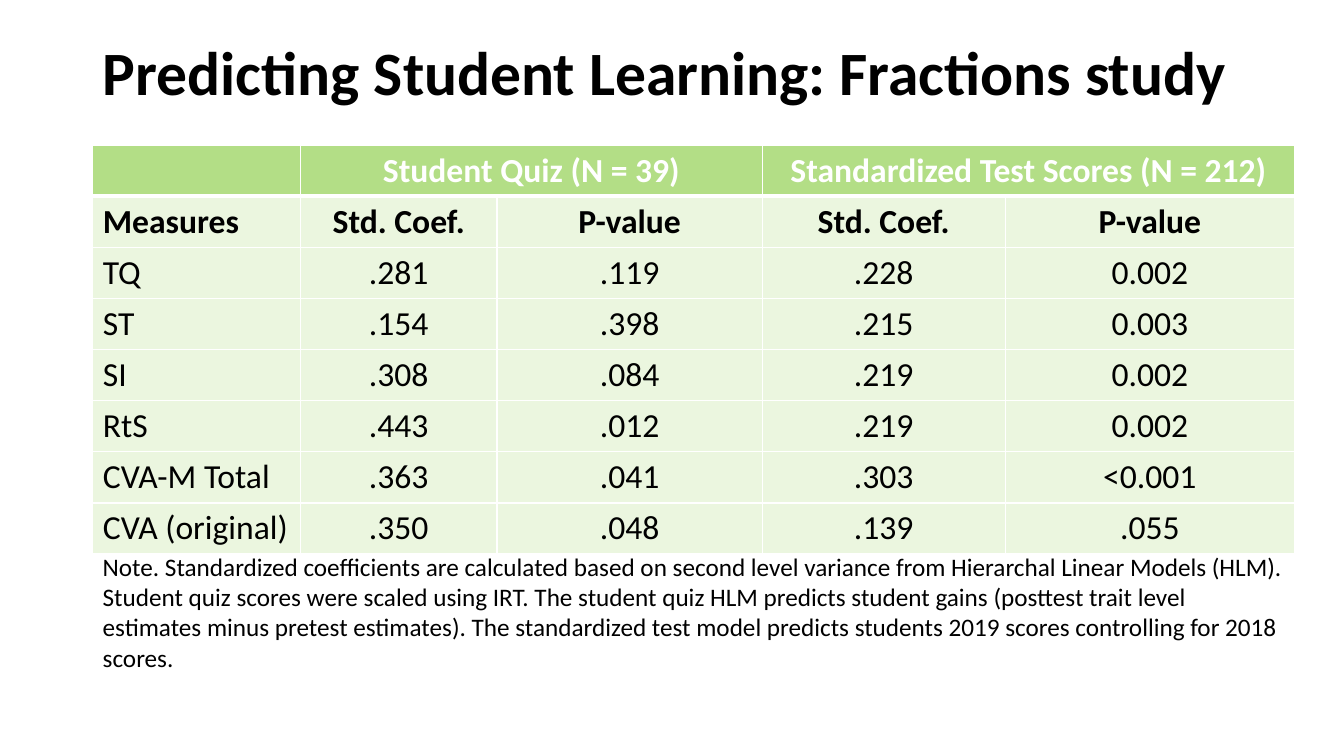
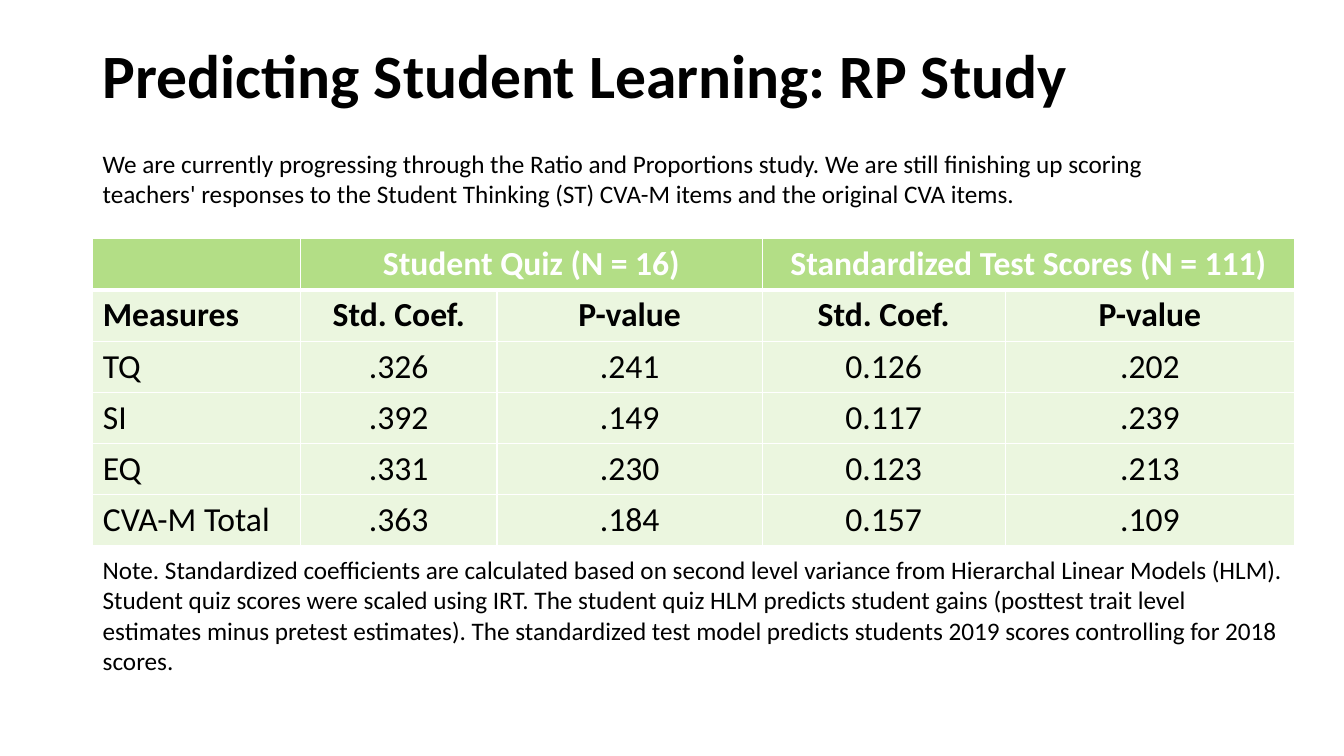
"""Build two slides of regression results, one per study."""
from lxml import etree
from pptx import Presentation
from pptx.dml.color import RGBColor
from pptx.enum import text as t
from pptx.oxml import ns
from pptx.util import Inches, Pt

FONT = "Calibri"
BLACK = RGBColor(0x00, 0x00, 0x00)
WHITE = RGBColor(0xFF, 0xFF, 0xFF)
GREEN = RGBColor(0x92, 0xD0, 0x50)
HEADER_OPACITY, BODY_OPACITY = 69, 18
LEFT, WIDTH = 0.92, 11.92
COLUMN_WIDTHS = (2.06, 1.95, 2.63, 2.41, 2.87)
ROW_HEIGHT = 0.5
MEASURE_HEADINGS = ("Measures", "Std. Coef.", "P-value", "Std. Coef.", "P-value")
NOTE = (
    "Note. Standardized coefficients are calculated based on second level variance "
    "from Hierarchal Linear Models (HLM). Student quiz scores were scaled using IRT. "
    "The student quiz HLM predicts student gains (posttest trait level estimates minus "
    "pretest estimates). The standardized test model predicts students 2019 scores "
    "controlling for 2018 scores."
)

STUDIES = [
    {
        "title": "Predicting Student Learning: Fractions study",
        "title_top": 0.02,
        "table_top": 1.44,
        "sample_sizes": (39, 212),
        "results": [
            ("TQ", ".281", ".119", ".228", "0.002"),
            ("ST", ".154", ".398", ".215", "0.003"),
            ("SI", ".308", ".084", ".219", "0.002"),
            ("RtS", ".443", ".012", ".219", "0.002"),
            ("CVA-M Total", ".363", ".041", ".303", "<0.001"),
            ("CVA (original)", ".350", ".048", ".139", ".055"),
        ],
        "texts": [(NOTE, 5.42, WIDTH, 1.31)],
    },
    {
        "title": "Predicting Student Learning: RP Study",
        "title_top": 0.05,
        "table_top": 2.37,
        "sample_sizes": (16, 111),
        "results": [
            ("TQ", ".326", ".241", "0.126", ".202"),
            ("SI", ".392", ".149", "0.117", ".239"),
            ("EQ", ".331", ".230", "0.123", ".213"),
            ("CVA-M Total", ".363", ".184", "0.157", ".109"),
        ],
        "texts": [
            (
                "We are currently progressing through the Ratio and Proportions study. "
                "We are still finishing up scoring teachers' responses to the Student "
                "Thinking (ST) CVA-M items and the original CVA items.",
                1.42, 11.32, 0.71,
            ),
            (NOTE, 5.45, WIDTH, 1.31),
        ],
    },
]


def write(para, words, size, color=BLACK, bold=False, align=t.PP_ALIGN.LEFT):
    para.alignment = align
    span = para.add_run()
    span.text = words
    span.font.name = FONT
    span.font.size = Pt(size)
    span.font.bold = bold
    span.font.color.rgb = color


def add_title(page, words, top):
    title = page.shapes.title
    title.left, title.top = Inches(LEFT), Inches(top)
    title.width, title.height = Inches(11.5), Inches(1.45)
    frame = title.text_frame
    frame.auto_size = t.MSO_AUTO_SIZE.NONE
    frame.vertical_anchor = t.MSO_ANCHOR.MIDDLE
    para = frame.paragraphs[0]
    para.line_spacing = 0.9
    write(para, words, 44, bold=True)


def add_text(page, words, top, width, height):
    box = page.shapes.add_textbox(Inches(LEFT), Inches(top), Inches(width), Inches(height))
    box.text_frame.word_wrap = True
    write(box.text_frame.paragraphs[0], words, 18)


def style_cell(cell, row):
    props = cell._tc.get_or_add_tcPr()
    weights = {"L": 1, "R": 1, "T": 3 if row == 1 else 1, "B": 3 if row == 0 else 1}
    for side, weight in weights.items():
        line = etree.SubElement(props, ns.qn(f"a:ln{side}"), w=str(Pt(weight)))
        solid = etree.SubElement(line, ns.qn("a:solidFill"))
        etree.SubElement(solid, ns.qn("a:srgbClr"), val=str(WHITE))
    cell.fill.solid()
    cell.fill.fore_color.rgb = GREEN
    opacity = HEADER_OPACITY if row == 0 else BODY_OPACITY
    color = props.find(f"{ns.qn('a:solidFill')}/{ns.qn('a:srgbClr')}")
    etree.SubElement(color, ns.qn("a:alpha"), val=str(opacity * 1000))


def add_results(page, top, sample_sizes, results):
    quiz, test = sample_sizes
    groups = ("", f"Student Quiz (N = {quiz})", "",
              f"Standardized Test Scores (N = {test})", "")
    rows = [groups, MEASURE_HEADINGS, *results]
    table = page.shapes.add_table(
        len(rows), len(COLUMN_WIDTHS), Inches(LEFT), Inches(top),
        Inches(WIDTH), Inches(ROW_HEIGHT * len(rows))).table
    table.horz_banding = False
    for column, width in zip(table.columns, COLUMN_WIDTHS):
        column.width = Inches(width)
    for r, values in enumerate(rows):
        for c, value in enumerate(values):
            cell = table.cell(r, c)
            style_cell(cell, r)
            if value:
                write(cell.text_frame.paragraphs[0], value, 24,
                      WHITE if r == 0 else BLACK, r < 2,
                      t.PP_ALIGN.CENTER if c else t.PP_ALIGN.LEFT)
    for first in (1, 3):
        table.cell(0, first).merge(table.cell(0, first + 1))


def main():
    deck = Presentation()
    deck.slide_width, deck.slide_height = Inches(13.33), Inches(7.5)
    title_only = deck.slide_layouts[5]
    for study in STUDIES:
        page = deck.slides.add_slide(title_only)
        add_title(page, study["title"], study["title_top"])
        add_results(page, study["table_top"], study["sample_sizes"], study["results"])
        for words, top, width, height in study["texts"]:
            add_text(page, words, top, width, height)
    deck.save("out.pptx")


if __name__ == "__main__":
    main()
